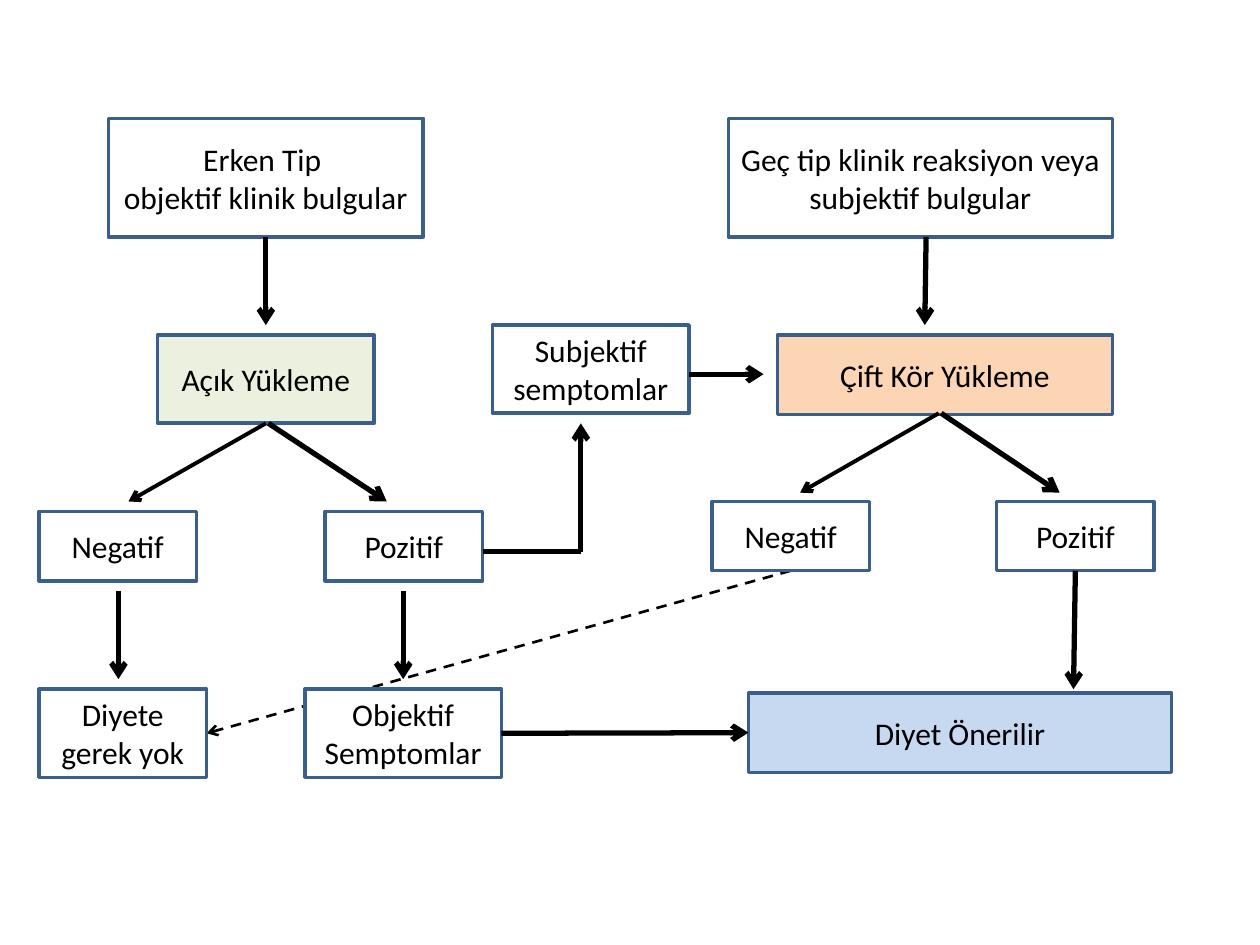
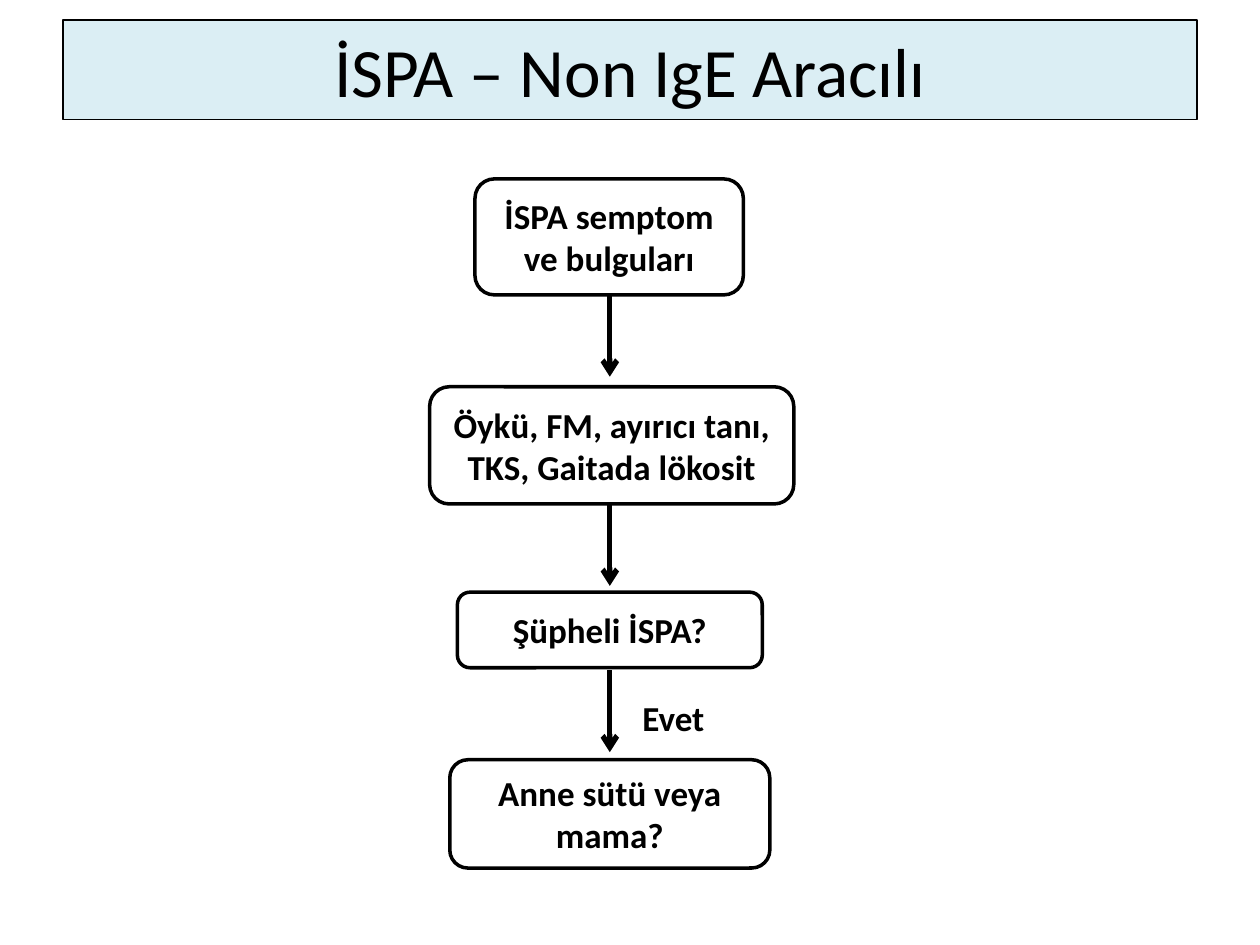
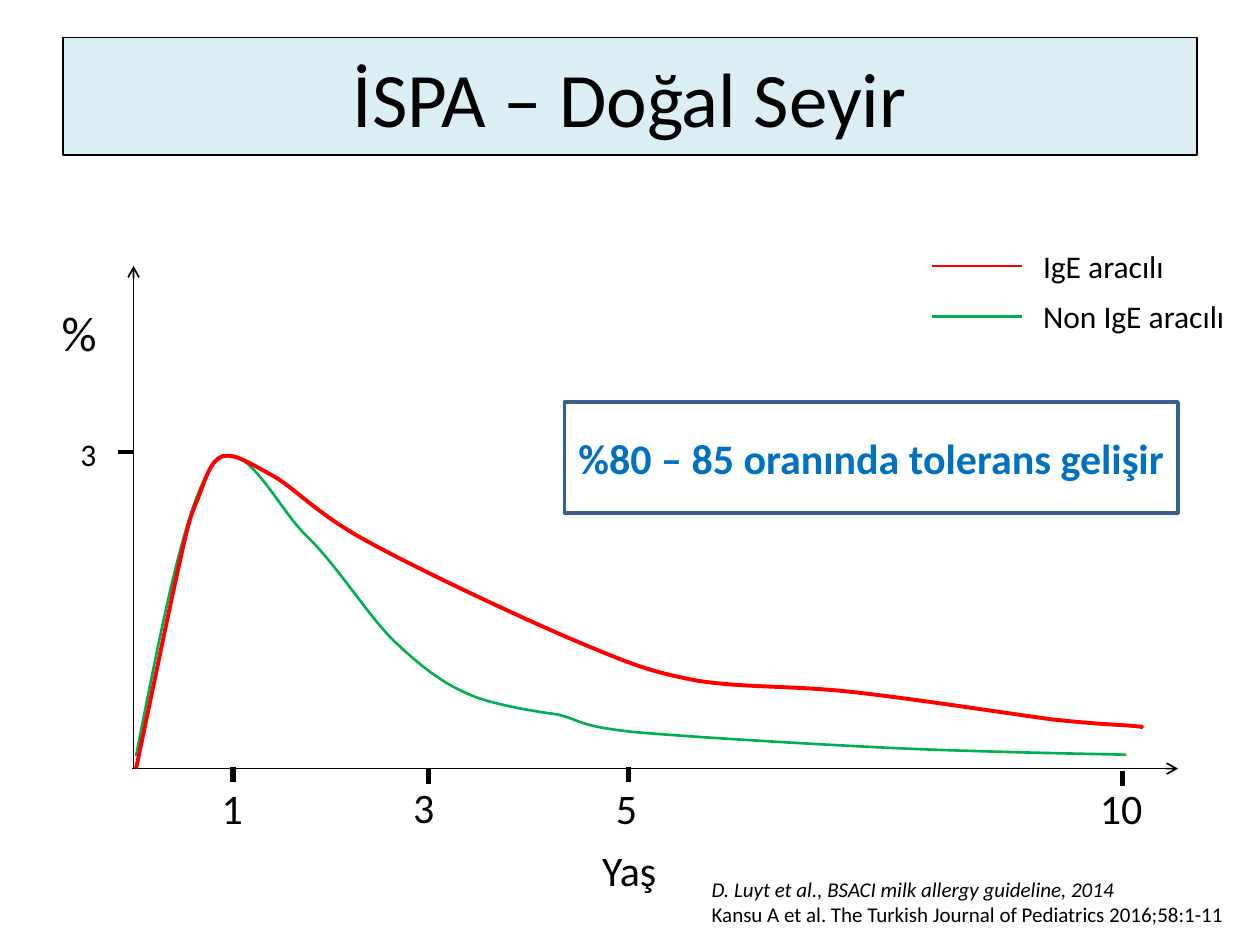
from dataclasses import dataclass

from lxml.etree import SubElement
from pptx import Presentation
from pptx.dml.color import RGBColor
from pptx.enum.dml import MSO_LINE
from pptx.enum.shapes import MSO_CONNECTOR, MSO_SHAPE
from pptx.enum.text import MSO_ANCHOR, MSO_AUTO_SIZE, PP_ALIGN
from pptx.oxml.ns import qn
from pptx.util import Inches, Pt


@dataclass(frozen=True)
class Theme:
    font: str = "Calibri"
    black: str = "000000"
    white: str = "FFFFFF"
    frame: str = "3A5F8C"
    band: str = "DBEEF4"
    open_test: str = "EBF1DE"
    blind_test: str = "FCD5B5"
    diet: str = "C6D9F1"
    ige: str = "FF0000"
    non_ige: str = "00B050"
    message: str = "0070C0"
    note: int = 12
    body: int = 18
    step: int = 20
    large: int = 24
    unit: int = 28


THEME = Theme()
TITLE_ONLY, BLANK = 5, 6
TOP, LEFT, BOTTOM, RIGHT = range(4)  # connection sites of a rectangle

# Slide 1: name -> (text, place, fill)
CHALLENGE_BOXES = {
    "early": ("Erken Tip \nobjektif klinik bulgular", (0.86, 0.94, 2.5, 0.94), None),
    "late": ("Geç tip klinik reaksiyon veya subjektif bulgular",
             (5.78, 0.94, 3.05, 0.94), None),
    "open": ("Açık Yükleme", (1.25, 2.66, 1.72, 0.7), THEME.open_test),
    "blind": ("Çift Kör Yükleme", (6.17, 2.66, 2.66, 0.63), THEME.blind_test),
    "open negative": ("Negatif", (0.31, 4.06, 1.25, 0.55), None),
    "open positive": ("Pozitif", (2.58, 4.06, 1.25, 0.55), None),
    "blind negative": ("Negatif", (5.65, 3.98, 1.25, 0.55), None),
    "blind positive": ("Pozitif", (7.91, 3.98, 1.25, 0.55), None),
    "subjective": ("Subjektif semptomlar", (3.91, 2.58, 1.56, 0.7), None),
    "objective": ("Objektif Semptomlar", (2.42, 5.47, 1.56, 0.7), THEME.white),
    "no diet": ("Diyete gerek yok", (0.31, 5.47, 1.33, 0.7), None),
    "diet": ("Diyet Önerilir", (5.94, 5.5, 3.36, 0.63), THEME.diet),
}
# Each end is a point or a (box, site) pair
CHALLENGE_ARROWS = [
    (("early", BOTTOM), (2.11, 2.58), 3),
    (("open", BOTTOM), (1.02, 3.98), 2.25),
    ((2.13, 3.36), (3.07, 3.98), 3),
    ((0.94, 4.69), (0.94, 5.39), 3),
    ((3.2, 4.69), (3.2, 5.39), 3),
    ((4.61, 4.38), (4.61, 3.36), 3),
    ((5.47, 2.97), (6.06, 2.97), 3),
    (("objective", RIGHT), ("diet", LEFT), 3),
    ((7.35, 1.88), (7.34, 2.58), 3),
    ((7.45, 3.28), (6.35, 3.91), 2.25),
    ((7.47, 3.28), (8.41, 3.91), 3),
    (("blind positive", BOTTOM), (8.52, 5.47), 3),
]
POSITIVE_ELBOW = ((3.83, 4.38), (4.61, 4.38))
NEGATIVE_LINK = (("blind negative", BOTTOM), ("no diet", RIGHT))

# Slide 2
NON_IGE_TITLE = ("İSPA – Non IgE Aracılı", 0.16, 0.79, 39.6)
NON_IGE_STEPS = [
    ("İSPA semptom ve bulguları", (3.77, 1.42, 2.13, 0.92)),
    ("Öykü, FM, ayırıcı tanı, TKS, Gaitada lökosit", (3.41, 3.07, 2.89, 0.93)),
    ("Şüpheli İSPA?", (3.63, 4.7, 2.42, 0.6)),
    ("Anne sütü veya mama?", (3.57, 6.03, 2.54, 0.86)),
]
STEP_AXIS, STEP_ARROW_TOPS, STEP_ARROW_LENGTH = 4.84, (2.34, 4, 5.32), 0.65
YES_LABEL = ("Evet", (5, 5.48, 0.7, 0.44))

# Slide 3
COURSE_TITLE = ("İSPA – Doğal Seyir", 0.3, 0.93, 44)
AXES = [((1.05, 6.1), (9.35, 6.1)), ((1.06, 6.1), (1.06, 2.11))]
# (age, tick x, tick top, label place)
AGE_TICKS = [
    ("1", 1.85, 6.09, (1.66, 6.16, 0.45, 0.5)),
    ("3", 3.4, 6.1, (3.18, 6.15, 0.45, 0.5)),
    ("5", 4.99, 6.09, (4.79, 6.16, 0.45, 0.5)),
    ("10", 8.91, 6.12, (8.63, 6.16, 0.62, 0.5)),
]
TICK_LENGTH = 0.12
AXIS_LABELS = [
    ("Yaş", (4.68, 6.65, 0.64, 0.5), THEME.large),
    ("%", (0.39, 2.35, 0.48, 0.57), THEME.unit),
    ("3", (0.54, 3.4, 0.33, 0.4), THEME.body),
]
PERCENT_TICK = ((0.94, 3.59), (1.06, 3.59))
LEGEND = [("IgE aracılı", THEME.ige, 1.17), ("Non IgE aracılı", THEME.non_ige, 1.66)]
LEGEND_TOP, LEGEND_GAP = 2.11, 0.4
# A start point, then two control points and an end point per segment
NON_IGE_CURVE = [
    (1.08, 6),
    (1.28, 4.99), (1.47, 3.99), (1.69, 3.69),
    (1.92, 3.4), (2.19, 4.02), (2.43, 4.25),
    (2.67, 4.48), (2.91, 4.87), (3.12, 5.08),
    (3.34, 5.29), (3.51, 5.42), (3.72, 5.51),
    (3.94, 5.61), (4.42, 5.67), (4.42, 5.67),
    (4.63, 5.72), (4.57, 5.76), (5.03, 5.81),
    (5.48, 5.85), (6.5, 5.91), (7.15, 5.94),
    (7.81, 5.97), (8.94, 5.99), (8.94, 5.99),
]
IGE_CURVE = [
    (1.08, 6.1),
    (1.21, 5.48), (1.34, 4.85), (1.42, 4.49),
    (1.5, 4.13), (1.51, 4.1), (1.57, 3.96),
    (1.63, 3.81), (1.67, 3.65), (1.77, 3.62),
    (1.87, 3.6), (1.99, 3.68), (2.19, 3.79),
    (2.38, 3.91), (2.53, 4.09), (2.94, 4.31),
    (3.34, 4.53), (4.17, 4.92), (4.6, 5.1),
    (5.03, 5.28), (5.16, 5.33), (5.52, 5.4),
    (5.88, 5.46), (6.27, 5.44), (6.74, 5.49),
    (7.21, 5.54), (7.98, 5.66), (8.35, 5.71),
    (8.73, 5.75), (8.85, 5.75), (8.97, 5.76),
    (9.09, 5.77), (9.07, 5.77), (9.05, 5.77),
]
TOLERANCE = ("%80 – 85 oranında tolerans gelişir", (4.48, 3.19, 4.87, 0.88))
REFERENCES = ("D. Luyt et al., BSACI milk allergy guideline, 2014\n"
              "Kansu A et al. The Turkish Journal of Pediatrics 2016;58:1-11")
REFERENCES_PLACE = (5.55, 6.91, 4.45, 0.5)


def rgb(code):
    return RGBColor.from_string(code)


def inches(values):
    return [Inches(value) for value in values]


def write(frame, text, size, color=THEME.black, bold=False, align=PP_ALIGN.LEFT):
    frame.text = text
    for paragraph in frame.paragraphs:
        paragraph.alignment = align
        font = paragraph.font
        font.name, font.size, font.bold = THEME.font, Pt(size), bold
        font.color.rgb = rgb(color)


def paint(shape, fill, line, width):
    if fill:
        shape.fill.solid()
        shape.fill.fore_color.rgb = rgb(fill)
    else:
        shape.fill.background()
    shape.line.color.rgb = rgb(line)
    shape.line.width = Pt(width)


def add_title(slide, text, top, height, size):
    title = slide.shapes.title
    title.left, title.top, title.width, title.height = inches((0.5, top, 9, height))
    paint(title, THEME.band, THEME.black, 0.75)
    write(title.text_frame, text, size, align=PP_ALIGN.CENTER)
    title.text_frame.auto_size = MSO_AUTO_SIZE.NONE
    title.text_frame.vertical_anchor = MSO_ANCHOR.MIDDLE


def add_box(slide, text, place, fill=None, kind=MSO_SHAPE.RECTANGLE,
            line=THEME.frame, size=THEME.body, color=THEME.black, bold=False):
    box = slide.shapes.add_shape(kind, *inches(place))
    box.shadow.inherit = False
    paint(box, fill, line, 2)
    box.text_frame.word_wrap = True
    box.text_frame.vertical_anchor = MSO_ANCHOR.MIDDLE
    write(box.text_frame, text, size, color, bold, PP_ALIGN.CENTER)
    return box


def add_label(slide, text, place, size, bold=False, wrap=False):
    frame = slide.shapes.add_textbox(*inches(place)).text_frame
    frame.word_wrap = wrap
    frame.auto_size = MSO_AUTO_SIZE.SHAPE_TO_FIT_TEXT
    write(frame, text, size, bold=bold)
    return frame


def add_line(slide, start, end, width, color=THEME.black, arrow=False, boxes=None):
    """Draw a straight line; an end given as (box, site) is glued to that box."""
    points = [(0, 0) if isinstance(tip[0], str) else tip for tip in (start, end)]
    connector = slide.shapes.add_connector(
        MSO_CONNECTOR.STRAIGHT, *inches(points[0] + points[1]))
    for tip, connect in ((start, connector.begin_connect), (end, connector.end_connect)):
        if isinstance(tip[0], str):
            connect(boxes[tip[0]], tip[1])
    connector.line.color.rgb = rgb(color)
    connector.line.width = Pt(width)
    if arrow:
        SubElement(connector.line._get_or_add_ln(), qn("a:tailEnd"), type="arrow")
    SubElement(connector.element.spPr, qn("a:effectLst"))
    return connector


def add_curve(slide, points, color, width):
    """Draw a freeform and turn each three of its segments into one Bézier curve."""
    start, *rest = [tuple(inches(point)) for point in points]
    builder = slide.shapes.build_freeform(*start)
    builder.add_line_segments(rest, close=False)
    curve = builder.convert_to_shape()
    curve.shadow.inherit = False
    paint(curve, None, color, width)
    outline = next(curve.element.iter(qn("a:path")))
    segments = outline.findall(qn("a:lnTo"))
    for first in range(0, len(segments), 3):
        bezier = SubElement(outline, qn("a:cubicBezTo"))
        for segment in segments[first:first + 3]:
            bezier.append(segment[0])
            outline.remove(segment)


def build_challenge(slide):
    boxes = {name: add_box(slide, *box) for name, box in CHALLENGE_BOXES.items()}
    for start, end, width in CHALLENGE_ARROWS:
        add_line(slide, start, end, width, arrow=True, boxes=boxes)
    add_line(slide, *POSITIVE_ELBOW, 3)
    # The dashed link runs behind the boxes
    link = add_line(slide, *NEGATIVE_LINK, 1.5, arrow=True, boxes=boxes)
    link.line.dash_style = MSO_LINE.DASH
    boxes["early"].element.addprevious(link.element)


def build_non_ige(slide):
    add_title(slide, *NON_IGE_TITLE)
    for text, place in NON_IGE_STEPS:
        add_box(slide, text, place, THEME.white, MSO_SHAPE.ROUNDED_RECTANGLE,
                THEME.black, THEME.step, bold=True)
    add_label(slide, *YES_LABEL, THEME.step, bold=True)
    for top in STEP_ARROW_TOPS:
        add_line(slide, (STEP_AXIS, top), (STEP_AXIS, top + STEP_ARROW_LENGTH),
                 3, arrow=True)


def build_course(slide):
    add_title(slide, *COURSE_TITLE)
    # Axes, ticks and labels
    for start, end in AXES:
        add_line(slide, start, end, 1, arrow=True)
    for age, x, top, place in AGE_TICKS:
        add_line(slide, (x, top), (x, top + TICK_LENGTH), 3)
        add_label(slide, age, place, THEME.large)
    add_line(slide, *PERCENT_TICK, 2.25)
    for text, place, size in AXIS_LABELS:
        add_label(slide, text, place, size)
    # Curves and legend
    add_curve(slide, NON_IGE_CURVE, THEME.non_ige, 1.5)
    add_curve(slide, IGE_CURVE, THEME.ige, 2.25)
    for row, (text, color, width) in enumerate(LEGEND):
        y = LEGEND_TOP + row * LEGEND_GAP
        add_line(slide, (7.4, y), (8.11, y), 1.5, color)
        add_label(slide, text, (8.18, y - 0.2, width, 0.4), THEME.body)
    # Message and references
    add_box(slide, *TOLERANCE, size=THEME.large, color=THEME.message, bold=True)
    references = add_label(slide, REFERENCES, REFERENCES_PLACE, THEME.note, wrap=True)
    references.paragraphs[0].font.italic = True


def main():
    deck = Presentation()
    deck.slide_width, deck.slide_height = Inches(10), Inches(7.5)
    for layout, build in ((BLANK, build_challenge), (TITLE_ONLY, build_non_ige),
                          (TITLE_ONLY, build_course)):
        build(deck.slides.add_slide(deck.slide_layouts[layout]))
    deck.save("out.pptx")


if __name__ == "__main__":
    main()
